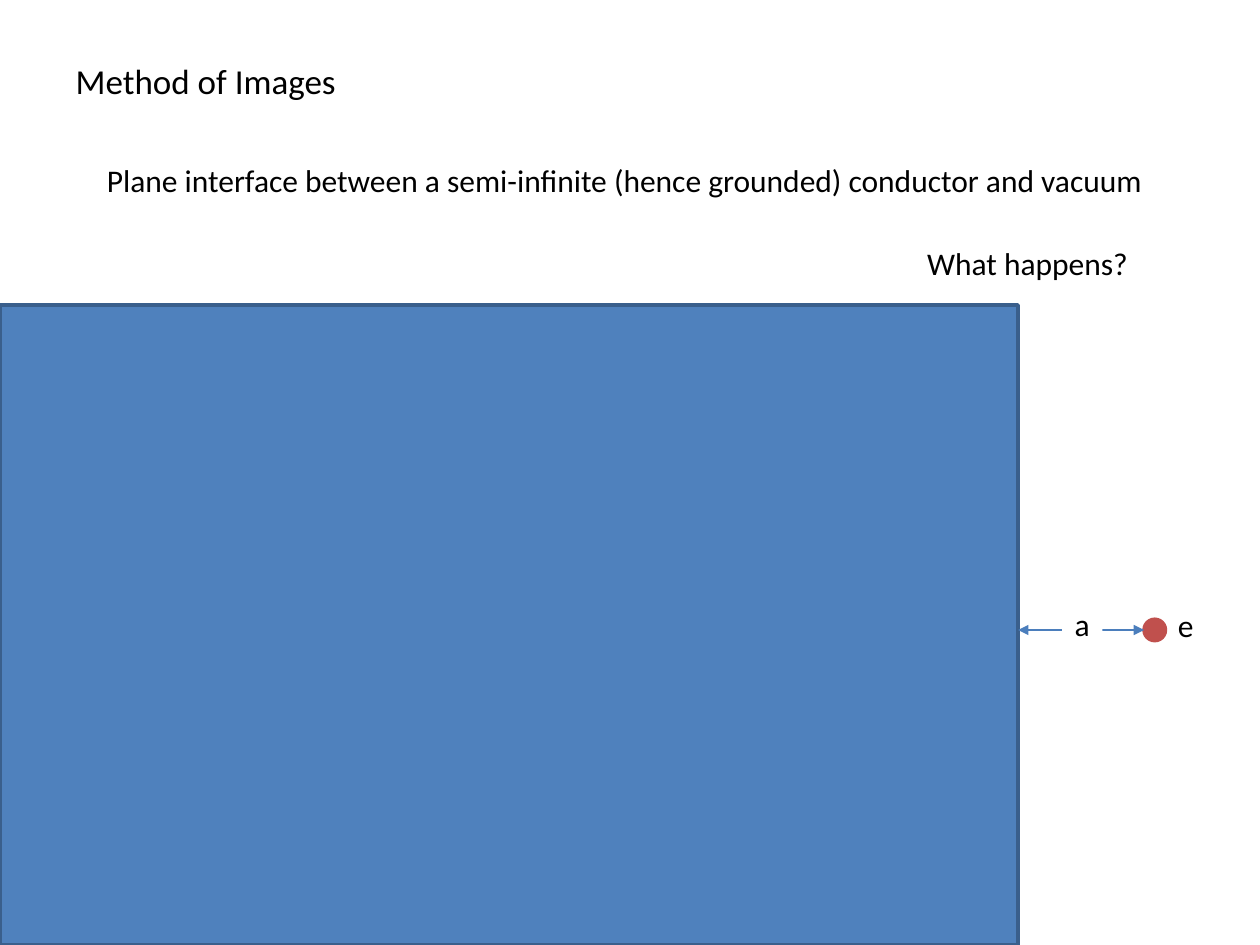
from lxml.etree import SubElement
from pptx import Presentation
from pptx.dml.color import RGBColor
from pptx.enum.shapes import MSO_CONNECTOR, MSO_SHAPE
from pptx.enum.text import MSO_ANCHOR, MSO_AUTO_SIZE, PP_ALIGN
from pptx.oxml.ns import qn
from pptx.util import Inches, Pt

BLACK = RGBColor(0x00, 0x00, 0x00)
WHITE = RGBColor(0xFF, 0xFF, 0xFF)
CONDUCTOR_BLUE = RGBColor(0x4F, 0x81, 0xBD)
CONDUCTOR_EDGE = RGBColor(0x3A, 0x5F, 0x8C)
CHARGE_RED = RGBColor(0xC0, 0x50, 0x4D)
ARROW_BLUE = RGBColor(0x4B, 0x7E, 0xBC)

INTERFACE_X = 8.08
CHARGE_X = 9.08
CHARGE_Y = 5
CHARGE_SIZE = 0.17


def place(shape, left, top, width, height):
    shape.left, shape.top = Inches(left), Inches(top)
    shape.width, shape.height = Inches(width), Inches(height)


def write_text(shape, text, size=18, color=BLACK, wrap=False):
    frame = shape.text_frame
    frame.word_wrap = wrap
    frame.auto_size = MSO_AUTO_SIZE.NONE
    frame.vertical_anchor = MSO_ANCHOR.TOP
    paragraph = frame.paragraphs[0]
    paragraph.alignment = PP_ALIGN.LEFT
    run = paragraph.add_run()
    run.text = text
    run.font.name = "Calibri"
    run.font.size = Pt(size)
    run.font.color.rgb = color


def add_label(slide, text, left, top, width, height=0.4, fill=None, **text_format):
    label = slide.shapes.add_textbox(
        Inches(left), Inches(top), Inches(width), Inches(height))
    if fill is not None:
        label.fill.solid()
        label.fill.fore_color.rgb = fill
    write_text(label, text, **text_format)


def add_filled_shape(slide, preset, left, top, width, height, fill, edge):
    shape = slide.shapes.add_shape(
        preset, Inches(left), Inches(top), Inches(width), Inches(height))
    shape.shadow.inherit = False
    shape.fill.solid()
    shape.fill.fore_color.rgb = fill
    shape.line.color.rgb = edge
    shape.line.width = Pt(2)


def add_double_arrow(slide, x1, y1, x2, y2):
    arrow = slide.shapes.add_connector(
        MSO_CONNECTOR.STRAIGHT, Inches(x1), Inches(y1), Inches(x2), Inches(y2))
    arrow.line.color.rgb = ARROW_BLUE
    arrow.line.width = Pt(0.75)
    line = arrow.line._get_or_add_ln()
    for end in ("a:headEnd", "a:tailEnd"):
        SubElement(line, qn(end), type="triangle")
    SubElement(arrow._element.spPr, qn("a:effectLst"))


def main():
    presentation = Presentation()
    presentation.slide_width = Inches(10)
    presentation.slide_height = Inches(7.5)
    slide = presentation.slides.add_slide(presentation.slide_layouts[5])

    title = slide.shapes.title
    place(title, 0.5, 0.42, 2.29, 0.44)
    write_text(title, "Method of Images", size=20)
    add_label(
        slide,
        "Plane interface between a semi-infinite (hence grounded) conductor and vacuum",
        0.75, 1.23, 8.67, wrap=True)

    add_filled_shape(slide, MSO_SHAPE.RECTANGLE, 0, 2.42, INTERFACE_X, 5.08,
                     CONDUCTOR_BLUE, CONDUCTOR_EDGE)
    add_filled_shape(slide, MSO_SHAPE.OVAL, CHARGE_X, CHARGE_Y - CHARGE_SIZE / 2,
                     CHARGE_SIZE, CHARGE_SIZE, CHARGE_RED, CHARGE_RED)
    add_label(slide, "e", CHARGE_X + CHARGE_SIZE, 4.76, 0.33)

    add_double_arrow(slide, INTERFACE_X, CHARGE_Y, CHARGE_X, CHARGE_Y)
    add_label(slide, "a", 8.43, 4.75, 0.32, fill=WHITE)
    add_label(slide, "What happens?", 7.26, 1.89, 1.82)

    presentation.save("out.pptx")


if __name__ == "__main__":
    main()
